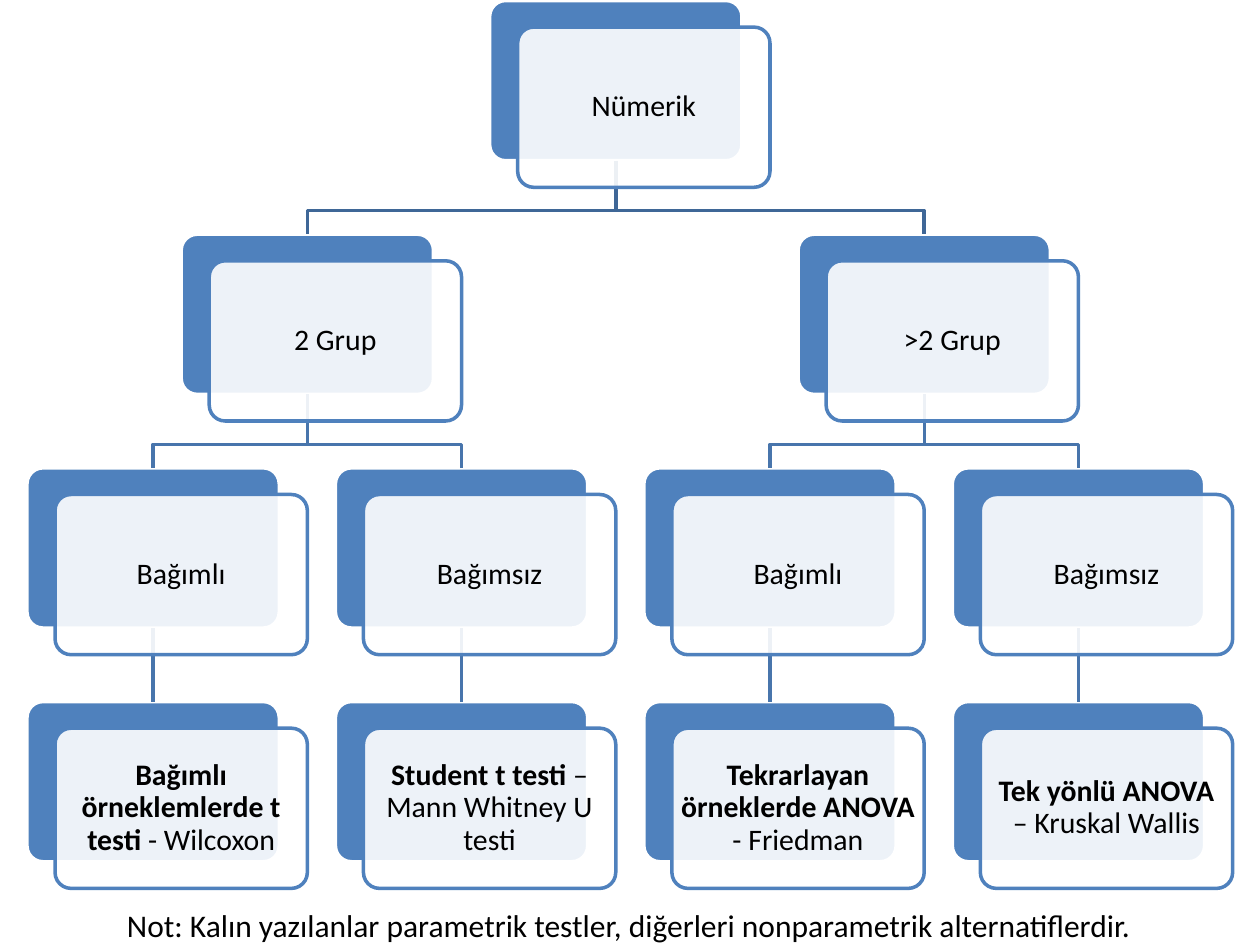
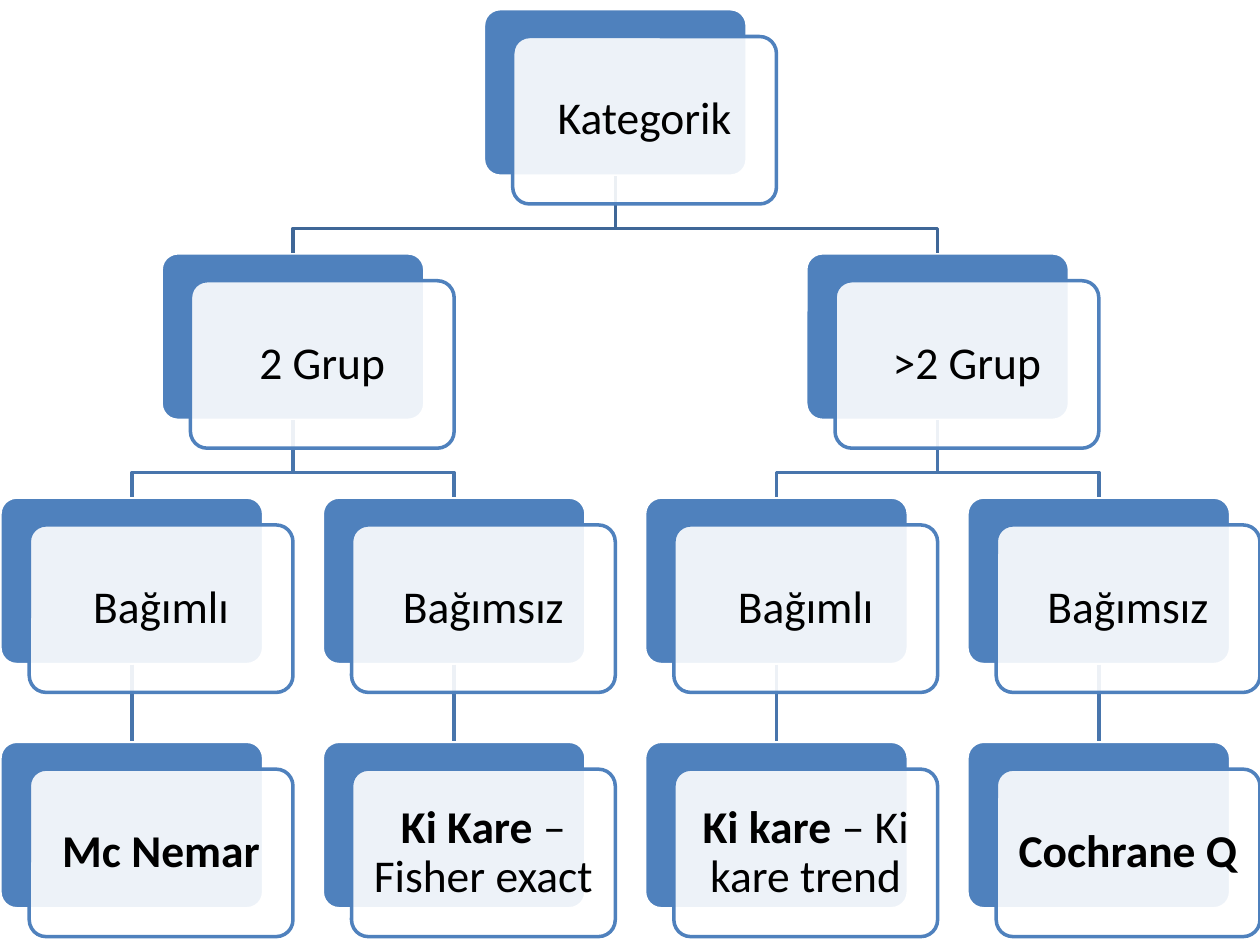
import pptx
import pptx.dml.color
import pptx.enum.shapes
import pptx.enum.text
import pptx.oxml
import pptx.oxml.ns
import pptx.util
from lxml import etree

Pt = pptx.util.Pt
RGBColor = pptx.dml.color.RGBColor
qn = pptx.oxml.ns.qn

BLUE = RGBColor(0x4F, 0x81, 0xBD)
TOP_LINK = RGBColor(0x3F, 0x67, 0x97)
LOWER_LINK = RGBColor(0x48, 0x75, 0xAC)
WHITE = RGBColor(0xFF, 0xFF, 0xFF)
BLACK = RGBColor(0, 0, 0)
FONT = "Calibri"
LINE_WIDTH = 2
CORNER = 0.1

ROW_SLOTS = [[1.5], [0.5, 2.5], [0, 1, 2, 3], [0, 1, 2, 3]]
PARENTS = [[0, 0], [0, 0, 1, 1], [0, 1, 2, 3]]
GROUPS = ["2 Grup", ">2 Grup"]
DEPENDENCE = ["Bağımlı", "Bağımsız"] * 2

NUMERIC_TESTS = [
    ("Bağımlı örneklemlerde t testi ", "- Wilcoxon"),
    ("Student t testi ", "– Mann Whitney U testi"),
    ("Tekrarlayan örneklerde ANOVA ", "- Friedman"),
    ("Tek yönlü ANOVA ", "– Kruskal Wallis"),
]
CATEGORICAL_TESTS = [
    ("Mc Nemar", ""),
    ("Ki Kare ", "– Fisher exact"),
    ("Ki kare ", "– Ki kare trend"),
    ("Cochrane Q", ""),
]
NOTE = "Not: Kalın yazılanlar parametrik testler, diğerleri nonparametrik alternatiflerdir."


def add_span(para, text, size, bold=False):
    """Append one formatted run to a paragraph."""
    span = para.add_run()
    span.text = text
    span.font.name = FONT
    span.font.size = Pt(size)
    span.font.bold = bold
    span.font.color.rgb = BLACK


def add_rounded(slide, box, fill, line):
    """Draw a rounded rectangle in the box (left, top, width, height)."""
    shape = slide.shapes.add_shape(
        pptx.enum.shapes.MSO_SHAPE.ROUNDED_RECTANGLE, *map(Pt, box))
    shape.adjustments[0] = CORNER
    shape.shadow.inherit = False
    shape.fill.solid()
    shape.fill.fore_color.rgb = fill
    shape.line.color.rgb = line
    shape.line.width = Pt(LINE_WIDTH)
    return shape


def add_panel(slide, box, label, size):
    """Draw the translucent front panel with its label of (bold, plain) text."""
    panel = add_rounded(slide, box, WHITE, BLUE)
    color = panel.fill._xPr.find(qn("a:solidFill"))[0]
    etree.SubElement(color, qn("a:alpha")).set("val", "90000")
    frame = panel.text_frame
    frame.word_wrap = True
    frame.vertical_anchor = pptx.enum.text.MSO_ANCHOR.MIDDLE
    inset = Pt(0.3 * size - 0.29 * CORNER * box[3])
    frame.margin_left = frame.margin_right = inset
    frame.margin_top = frame.margin_bottom = inset
    para = frame.paragraphs[0]
    para.alignment = pptx.enum.text.PP_ALIGN.CENTER
    para.line_spacing = 0.9
    for text, bold in zip(label, (True, False)):
        if text:
            add_span(para, text, size, bold)


def add_link(slide, parent, child, color):
    """Link a parent card to the child card below it."""
    start_x, end_x = (card.left + card.width // 2 for card in (parent, child))
    start_y, end_y = parent.top + parent.height, child.top
    if parent.left == child.left:
        link = slide.shapes.add_connector(
            pptx.enum.shapes.MSO_CONNECTOR.STRAIGHT, start_x, start_y, end_x, end_y)
        link.begin_connect(parent, 2)
        link.end_connect(child, 0)
        etree.SubElement(link._element.spPr, qn("a:effectLst"))
    else:
        bend_y = start_y + int(0.68 * (end_y - start_y))
        outline = slide.shapes.build_freeform(start_x, start_y)
        outline.add_line_segments(
            [(start_x, bend_y), (end_x, bend_y), (end_x, end_y)], close=False)
        link = outline.convert_to_shape()
        link.fill.background()
        link.shadow.inherit = False
    link.line.color.rgb = color
    link.line.width = Pt(LINE_WIDTH)


def add_tree(slide, left, top, width, size, root, tests):
    """Draw the four-level test selection tree across the given width."""
    card_width = width * 9 / 43
    card_height = 0.635 * card_width
    column_step, row_step = card_width * 11 / 9, 0.926 * card_width
    shift_x, shift_y = card_width / 9, 0.1055 * card_width
    boxes = [[(left + slot * column_step, top + row * row_step, card_width, card_height)
              for slot in slots] for row, slots in enumerate(ROW_SLOTS)]
    cards = [[add_rounded(slide, box, BLUE, WHITE) for box in row] for row in boxes]
    for level, parents in enumerate(PARENTS):
        color = LOWER_LINK if level else TOP_LINK
        for child, parent in zip(cards[level + 1], parents):
            add_link(slide, cards[level][parent], child, color)
    plain_rows = [[root], GROUPS, DEPENDENCE]
    labels = [[("", text) for text in row] for row in plain_rows] + [tests]
    for row, row_labels in zip(boxes, labels):
        for (x, y, *extent), label in zip(row, row_labels):
            add_panel(slide, (x + shift_x, y + shift_y, *extent), label, size)


def add_note(slide, left, top, width, height):
    """Write the note below the tree."""
    box = slide.shapes.add_textbox(Pt(left), Pt(top), Pt(width), Pt(height))
    box.text_frame.word_wrap = True
    add_span(box.text_frame.paragraphs[0], NOTE, 18)


def main():
    """Build and save the deck."""
    deck = pptx.Presentation()
    deck.slide_width, deck.slide_height = Pt(720), Pt(540)
    blank = deck.slide_layouts[6]
    numeric = deck.slides.add_slide(blank)
    add_tree(numeric, 15.4, 0.3, 689, 17, "Nümerik", NUMERIC_TESTS)
    add_note(numeric, 65.5, 514, 596, 29)
    categorical = deck.slides.add_slide(blank)
    add_tree(categorical, 0, 5, 720, 26, "Kategorik", CATEGORICAL_TESTS)
    deck.save("out.pptx")


if __name__ == "__main__":
    main()
